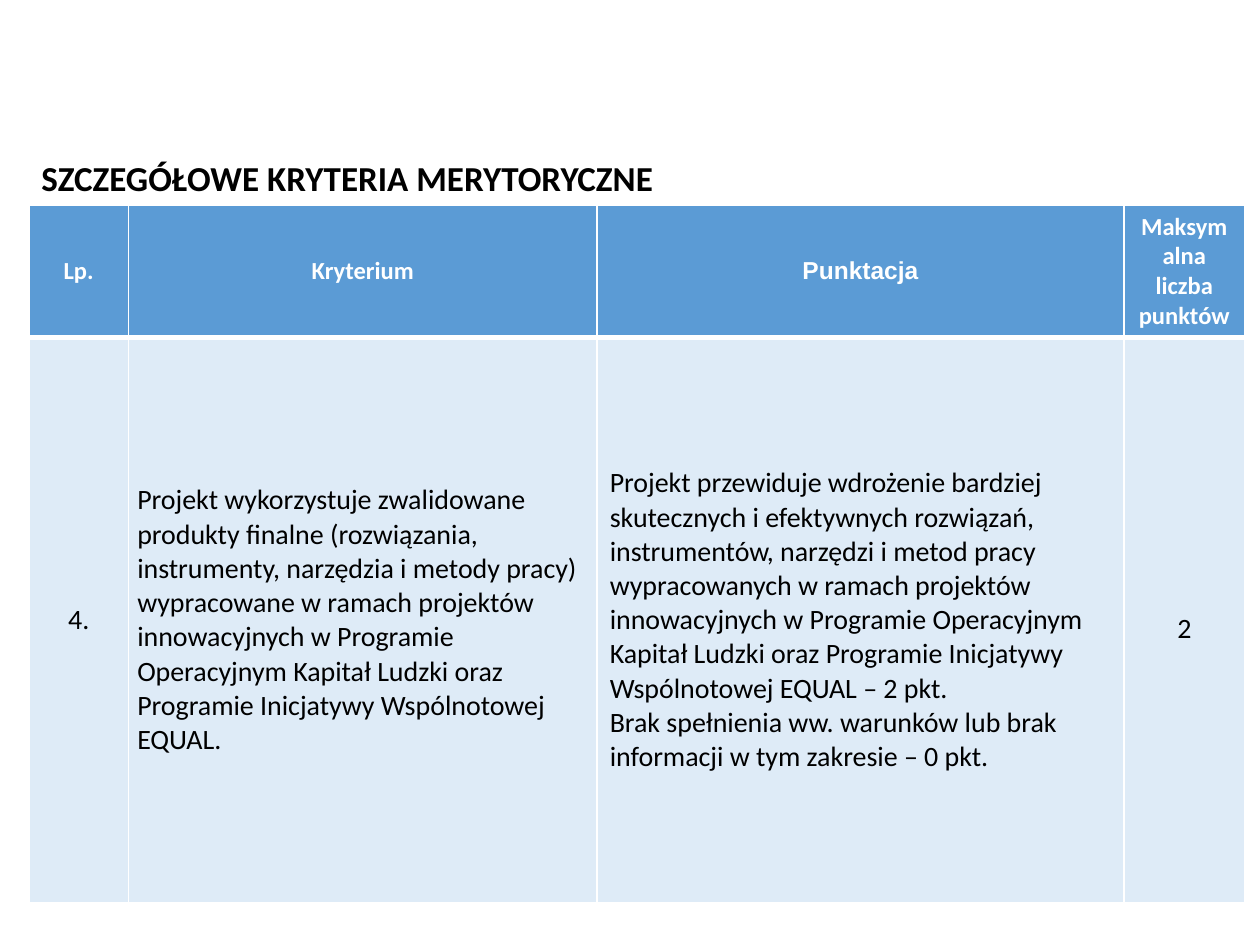
from dataclasses import dataclass

from lxml.etree import SubElement
from pptx import Presentation
from pptx.dml.color import RGBColor
from pptx.enum.text import MSO_ANCHOR as Anchor, MSO_AUTO_SIZE as AutoSize, PP_ALIGN as Align
from pptx.oxml.ns import qn
from pptx.util import Inches, Pt


@dataclass(frozen=True)
class Theme:
    font: str = "Calibri"
    alt_font: str = "Arial"
    black: str = "000000"
    white: str = "FFFFFF"
    header_fill: str = "5B9BD5"
    body_fill: str = "DEEBF7"
    title_size: int = 20
    header_size: int = 14
    body_size: int = 16
    thin_line: int = 1
    thick_line: int = 3


THEME = Theme()
COLUMN_WIDTHS = (0.79, 3.72, 4.18, 0.96)
ROW_HEIGHTS = (0.83, 4.49)
HEADERS = ("Lp.", "Kryterium", "Punktacja", "Maksymalna liczba punktów")
CRITERION = (
    "Projekt wykorzystuje zwalidowane produkty finalne (rozwiązania, instrumenty, "
    "narzędzia i metody pracy) wypracowane w ramach projektów innowacyjnych w Programie "
    "Operacyjnym Kapitał Ludzki oraz Programie Inicjatywy Wspólnotowej EQUAL."
)
SCORING = (
    "Projekt przewiduje wdrożenie bardziej skutecznych i efektywnych rozwiązań, "
    "instrumentów, narzędzi i metod pracy wypracowanych w ramach projektów innowacyjnych "
    "w Programie Operacyjnym Kapitał Ludzki oraz Programie Inicjatywy Wspólnotowej "
    "EQUAL – 2 pkt.",
    "Brak spełnienia ww. warunków lub brak informacji w tym zakresie – 0 pkt.",
)


def write(frame, paragraphs, size, color, bold=False, align=Align.LEFT, font=THEME.font):
    for index, text in enumerate(paragraphs):
        paragraph = frame.add_paragraph() if index else frame.paragraphs[0]
        paragraph.alignment = align
        run = paragraph.add_run()
        run.text = text
        run.font.name = font
        run.font.size = Pt(size)
        run.font.bold = bold
        run.font.color.rgb = RGBColor.from_string(color)


def set_borders(cell, top, bottom):
    """Draw white cell borders; must run before the cell is filled."""
    properties = cell._tc.get_or_add_tcPr()
    widths = {"L": THEME.thin_line, "R": THEME.thin_line, "T": top, "B": bottom}
    for side, width in widths.items():
        line = SubElement(properties, qn(f"a:ln{side}"), w=str(Pt(width)))
        SubElement(SubElement(line, qn("a:solidFill")), qn("a:srgbClr"), val=THEME.white)


def style_cell(cell, fill, top=THEME.thin_line, bottom=THEME.thin_line):
    set_borders(cell, top, bottom)
    cell.fill.solid()
    cell.fill.fore_color.rgb = RGBColor.from_string(fill)
    cell.vertical_anchor = Anchor.MIDDLE


def add_title(slide, text):
    title = slide.shapes.add_textbox(Inches(0.23), Inches(1.19), Inches(9.35), Inches(0.44))
    frame = title.text_frame
    frame.word_wrap = True
    frame.auto_size = AutoSize.SHAPE_TO_FIT_TEXT
    frame.vertical_anchor = Anchor.MIDDLE
    write(frame, [text], THEME.title_size, THEME.black, bold=True)


def add_criteria_table(slide):
    table = slide.shapes.add_table(
        len(ROW_HEIGHTS), len(COLUMN_WIDTHS), Inches(0.23), Inches(1.63),
        Inches(sum(COLUMN_WIDTHS)), Inches(sum(ROW_HEIGHTS)),
    ).table
    for column, width in zip(table.columns, COLUMN_WIDTHS):
        column.width = Inches(width)
    for row, height in zip(table.rows, ROW_HEIGHTS):
        row.height = Inches(height)

    for column, header in enumerate(HEADERS):
        cell = table.cell(0, column)
        style_cell(cell, THEME.header_fill, bottom=THEME.thick_line)
        font = THEME.alt_font if header == "Punktacja" else THEME.font
        write(cell.text_frame, [header], THEME.header_size, THEME.white, True, Align.CENTER, font)

    body = (
        (["4."], Align.CENTER),
        ([CRITERION], Align.LEFT),
        (SCORING, Align.LEFT),
        (["2"], Align.CENTER),
    )
    for column, (paragraphs, align) in enumerate(body):
        cell = table.cell(1, column)
        style_cell(cell, THEME.body_fill, top=THEME.thick_line)
        write(cell.text_frame, paragraphs, THEME.body_size, THEME.black, align=align)

    criterion, points = table.cell(1, 1), table.cell(1, 3)
    criterion.margin_left = criterion.margin_right = Inches(0.07)
    criterion.margin_top = criterion.margin_bottom = 0
    points.text_frame.paragraphs[0].line_spacing = 1.5


def main():
    deck = Presentation()
    deck.slide_width, deck.slide_height = Inches(10), Inches(7.5)
    slide = deck.slides.add_slide(deck.slide_layouts[6])
    add_criteria_table(slide)
    add_title(slide, "SZCZEGÓŁOWE KRYTERIA MERYTORYCZNE")
    deck.save("out.pptx")


if __name__ == "__main__":
    main()
